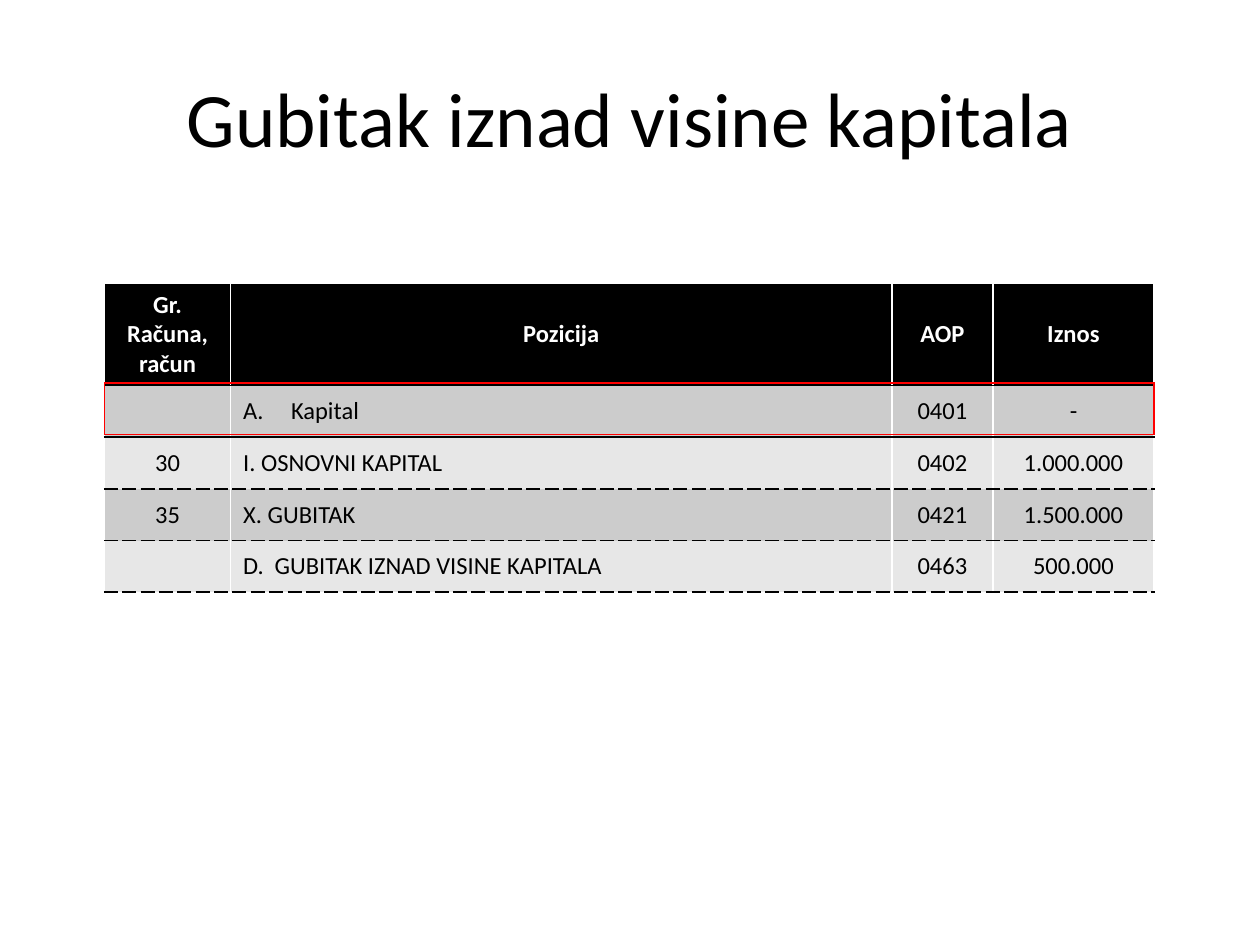
from lxml import etree
from pptx import Presentation
from pptx.dml.color import RGBColor
from pptx.enum.text import MSO_ANCHOR, PP_ALIGN
from pptx.oxml.ns import qn
from pptx.util import Inches, Pt

BLACK = RGBColor(0x00, 0x00, 0x00)
WHITE = RGBColor(0xFF, 0xFF, 0xFF)
RED = RGBColor(0xFF, 0x00, 0x00)
DARK_BAND = RGBColor(0xCC, 0xCC, 0xCC)
LIGHT_BAND = RGBColor(0xE7, 0xE7, 0xE7)
FONT = "Calibri"

COLUMN_WIDTHS = [1, 5.25, 0.8, 1.28]
HEADER_HEIGHT = 0.79
ROW_HEIGHT = 0.41
POSITION_COLUMN = 1
ROWS = [
    ["Gr. Računa, račun", "Pozicija", "AOP", "Iznos"],
    ["", "Kapital", "0401", "-"],
    ["30", "I. OSNOVNI KAPITAL", "0402", "1.000.000"],
    ["35", "X. GUBITAK", "0421", "1.500.000"],
    ["", "D.\tGUBITAK IZNAD VISINE KAPITALA", "0463", "500.000"],
]
ROW_RULES = [
    (WHITE, "solid"), (BLACK, "solid"), (BLACK, "solid"),
    (BLACK, "dash"), (BLACK, "dash"), (BLACK, "dash"),
]


def set_borders(cell, left, right, top, bottom):
    properties = cell._tc.get_or_add_tcPr()
    for side, (color, dash) in zip("LRTB", (left, right, top, bottom)):
        line = etree.SubElement(properties, qn(f"a:ln{side}"), w=str(Pt(1)))
        fill = etree.SubElement(line, qn("a:solidFill"))
        etree.SubElement(fill, qn("a:srgbClr"), val=str(color))
        etree.SubElement(line, qn("a:prstDash"), val=dash)


def add_plain_table(slide, rows, columns, left, top, width, height):
    table = slide.shapes.add_table(
        rows, columns, Inches(left), Inches(top), Inches(width), Inches(height)
    ).table
    table.first_row = False
    table.horz_banding = False
    return table


def number_with_letter(paragraph):
    properties = paragraph._p.get_or_add_pPr()
    properties.set("marL", str(Inches(0.38)))
    properties.set("indent", str(-Inches(0.38)))
    etree.SubElement(properties, qn("a:buFont"), typeface="+mj-lt")
    etree.SubElement(properties, qn("a:buAutoNum"), type="alphaUcPeriod")


def add_tab_stop(paragraph, position):
    stops = etree.SubElement(paragraph._p.get_or_add_pPr(), qn("a:tabLst"))
    etree.SubElement(stops, qn("a:tab"), pos=str(Inches(position)), algn="l")


def fill_cell(cell, text, row, column):
    header = row == 0
    side = (WHITE, "solid")
    set_borders(cell, side, side, ROW_RULES[row], ROW_RULES[row + 1])
    cell.fill.solid()
    cell.fill.fore_color.rgb = (
        BLACK if header else DARK_BAND if row % 2 else LIGHT_BAND
    )
    cell.vertical_anchor = MSO_ANCHOR.MIDDLE
    cell.text = text
    paragraph = cell.text_frame.paragraphs[0]
    if header or column != POSITION_COLUMN:
        paragraph.alignment = PP_ALIGN.CENTER
    if text == "Kapital":
        number_with_letter(paragraph)
    if "\t" in text:
        add_tab_stop(paragraph, 0.25)
    paragraph.font.name = FONT
    paragraph.font.size = Pt(14)
    paragraph.font.bold = header
    paragraph.font.color.rgb = WHITE if header else BLACK


def add_balance_table(slide, left, top, width):
    height = HEADER_HEIGHT + ROW_HEIGHT * (len(ROWS) - 1)
    table = add_plain_table(
        slide, len(ROWS), len(COLUMN_WIDTHS), left, top, width, height
    )
    for column, column_width in zip(table.columns, COLUMN_WIDTHS):
        column.width = Inches(column_width)
    for row, texts in enumerate(ROWS):
        table.rows[row].height = Inches(ROW_HEIGHT if row else HEADER_HEIGHT)
        for column, text in enumerate(texts):
            fill_cell(table.cell(row, column), text, row, column)


def add_capital_frame(slide, left, top, width, height):
    frame = add_plain_table(slide, 1, 1, left, top, width, height).cell(0, 0)
    set_borders(frame, *[(RED, "solid")] * 4)
    frame.fill.background()


def add_title(slide, left, top, width, height):
    title = slide.shapes.title
    title.left, title.top = Inches(left), Inches(top)
    title.width, title.height = Inches(width), Inches(height)
    title.text_frame.text = "Gubitak iznad visine kapitala"
    title.text_frame.vertical_anchor = MSO_ANCHOR.MIDDLE
    heading = title.text_frame.paragraphs[0]
    heading.alignment = PP_ALIGN.CENTER
    heading.font.name = FONT
    heading.font.size = Pt(44)
    heading.font.color.rgb = BLACK


def main():
    presentation = Presentation()
    presentation.slide_width = Inches(10)
    presentation.slide_height = Inches(7.5)
    slide = presentation.slides.add_slide(presentation.slide_layouts[5])
    add_title(slide, 0.5, 0.3, 9, 1.25)
    add_balance_table(slide, 0.83, 2.25, sum(COLUMN_WIDTHS))
    add_capital_frame(slide, 0.83, 3.04, sum(COLUMN_WIDTHS), ROW_HEIGHT)
    presentation.save("out.pptx")


if __name__ == "__main__":
    main()
